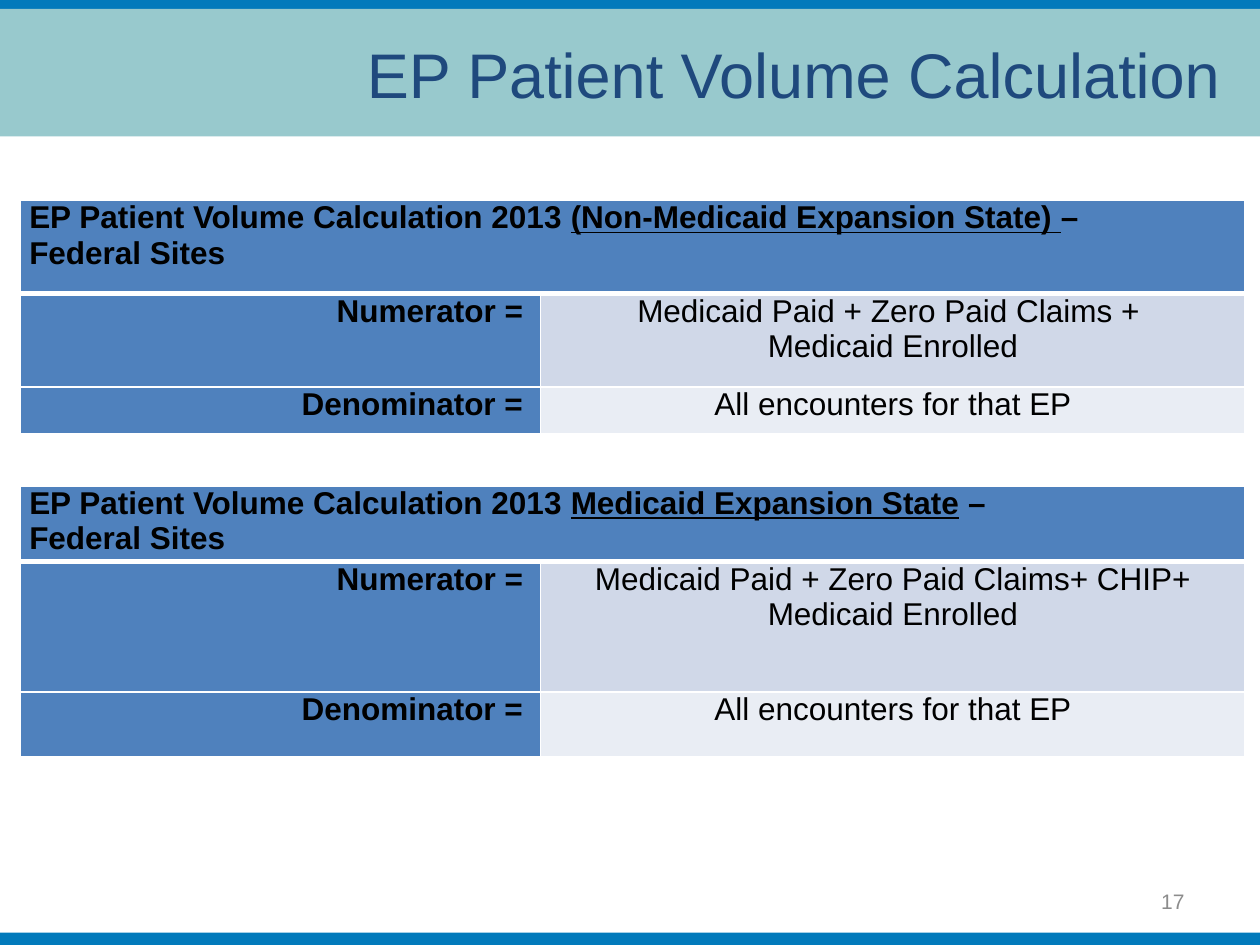
from lxml.etree import SubElement
from pptx import Presentation
from pptx.dml.color import RGBColor
from pptx.enum.shapes import MSO_SHAPE
from pptx.enum.text import MSO_ANCHOR, PP_ALIGN
from pptx.oxml.ns import qn
from pptx.util import Cm, Pt

BLUE = RGBColor(0x02, 0x7A, 0xBB)
TEAL = RGBColor(0x98, 0xC9, 0xCD)
NAVY = RGBColor(0x1F, 0x49, 0x7D)
GREY = RGBColor(0x8C, 0x8C, 0x8C)
BLACK = RGBColor(0x00, 0x00, 0x00)
WHITE = RGBColor(0xFF, 0xFF, 0xFF)
HEADER = RGBColor(0x4F, 0x81, 0xBD)
VALUE_FILLS = [RGBColor(0xD0, 0xD8, 0xE8), RGBColor(0xE9, 0xED, 0xF4)]
FONT = "Arial"
COLUMN_WIDTHS = [10.49, 14.2]


def add_span(para, text, size=18, color=BLACK, bold=False, underline=False):
    span = para.add_run()
    span.text = text
    span.font.name = FONT
    span.font.size = Pt(size)
    span.font.color.rgb = color
    span.font.bold = bold
    span.font.underline = underline


class SlideBuilder:
    def __init__(self, deck):
        self.page = deck.slides.add_slide(deck.slide_layouts[6])

    def band(self, top, height, color):
        shape = self.page.shapes.add_shape(
            MSO_SHAPE.RECTANGLE, Cm(0), Cm(top), Cm(25.4), Cm(height))
        shape.shadow.inherit = False
        shape.fill.solid()
        shape.fill.fore_color.rgb = color
        shape.line.fill.background()

    def label(self, text, left, top, width, height, align, **style):
        box = self.page.shapes.add_textbox(Cm(left), Cm(top), Cm(width), Cm(height))
        frame = box.text_frame
        frame.word_wrap = True
        frame.vertical_anchor = MSO_ANCHOR.MIDDLE
        para = frame.paragraphs[0]
        para.alignment = align
        add_span(para, text, **style)

    def border(self, cell, side, width):
        line = SubElement(cell._tc.get_or_add_tcPr(), qn(f"a:ln{side}"), w=str(Pt(width)))
        fill = SubElement(line, qn("a:solidFill"))
        SubElement(fill, qn("a:srgbClr"), val=str(WHITE))

    def cell(self, cell, lines, fill, align, row, **style):
        cell.margin_left = cell.margin_right = Cm(0.18)
        cell.margin_top = cell.margin_bottom = Cm(0)
        widths = {"L": 1, "R": 1, "T": 3 if row == 1 else 1, "B": 3 if row == 0 else 1}
        for side, width in widths.items():
            self.border(cell, side, width)
        cell.fill.solid()
        cell.fill.fore_color.rgb = fill
        for index, spans in enumerate(lines):
            frame = cell.text_frame
            para = frame.add_paragraph() if index else frame.paragraphs[0]
            para.alignment = align
            for text, underline in spans:
                add_span(para, text, underline=underline, **style)

    def formula_table(self, top, heights, state, dash, numerator):
        frame = self.page.shapes.add_table(
            3, 2, Cm(0.41), Cm(top), Cm(sum(COLUMN_WIDTHS)), Cm(sum(heights)))
        table = frame.table
        for column, width in zip(table.columns, COLUMN_WIDTHS):
            column.width = Cm(width)
        for row, height in zip(table.rows, heights):
            row.height = Cm(height)
        heading = [
            [("EP Patient Volume Calculation 2013 ", False), (state, True), (dash, False)],
            [("Federal Sites", False)],
        ]
        self.cell(table.cell(0, 0), heading, HEADER, PP_ALIGN.LEFT, 0, bold=True)
        self.cell(table.cell(0, 1), [], HEADER, PP_ALIGN.LEFT, 0)
        table.cell(0, 0).merge(table.cell(0, 1))
        formulas = [("Numerator = ", numerator),
                    ("Denominator = ", ["All encounters for that EP"])]
        for row, (name, lines) in enumerate(formulas, start=1):
            self.cell(table.cell(row, 0), [[(name, False)]], HEADER,
                      PP_ALIGN.RIGHT, row, bold=True)
            self.cell(table.cell(row, 1), [[(line, False)] for line in lines],
                      VALUE_FILLS[row - 1], PP_ALIGN.CENTER, row)


def main():
    deck = Presentation()
    deck.slide_width = Cm(25.4)
    deck.slide_height = Cm(19.05)
    slide = SlideBuilder(deck)
    slide.band(-0.03, 0.66, BLUE)
    slide.band(0.18, 2.57, TEAL)
    slide.band(18.8, 0.25, BLUE)
    slide.label("EP Patient Volume Calculation", 6.6, 0.23, 18.8, 2.51,
                PP_ALIGN.CENTER, size=36, color=NAVY)
    slide.label("17", 18.21, 17.65, 5.92, 1.02, PP_ALIGN.RIGHT, size=12, color=GREY)
    slide.formula_table(4.04, [1.88, 1.88, 0.94], "(Non-Medicaid Expansion State) ", "–",
                        ["Medicaid Paid + Zero Paid Claims + ", "Medicaid Enrolled"])
    slide.formula_table(9.8, [1.32, 2.62, 1.32], "Medicaid Expansion State", " –",
                        ["Medicaid Paid + Zero Paid Claims+ CHIP+ Medicaid Enrolled"])
    deck.save("out.pptx")


if __name__ == "__main__":
    main()
